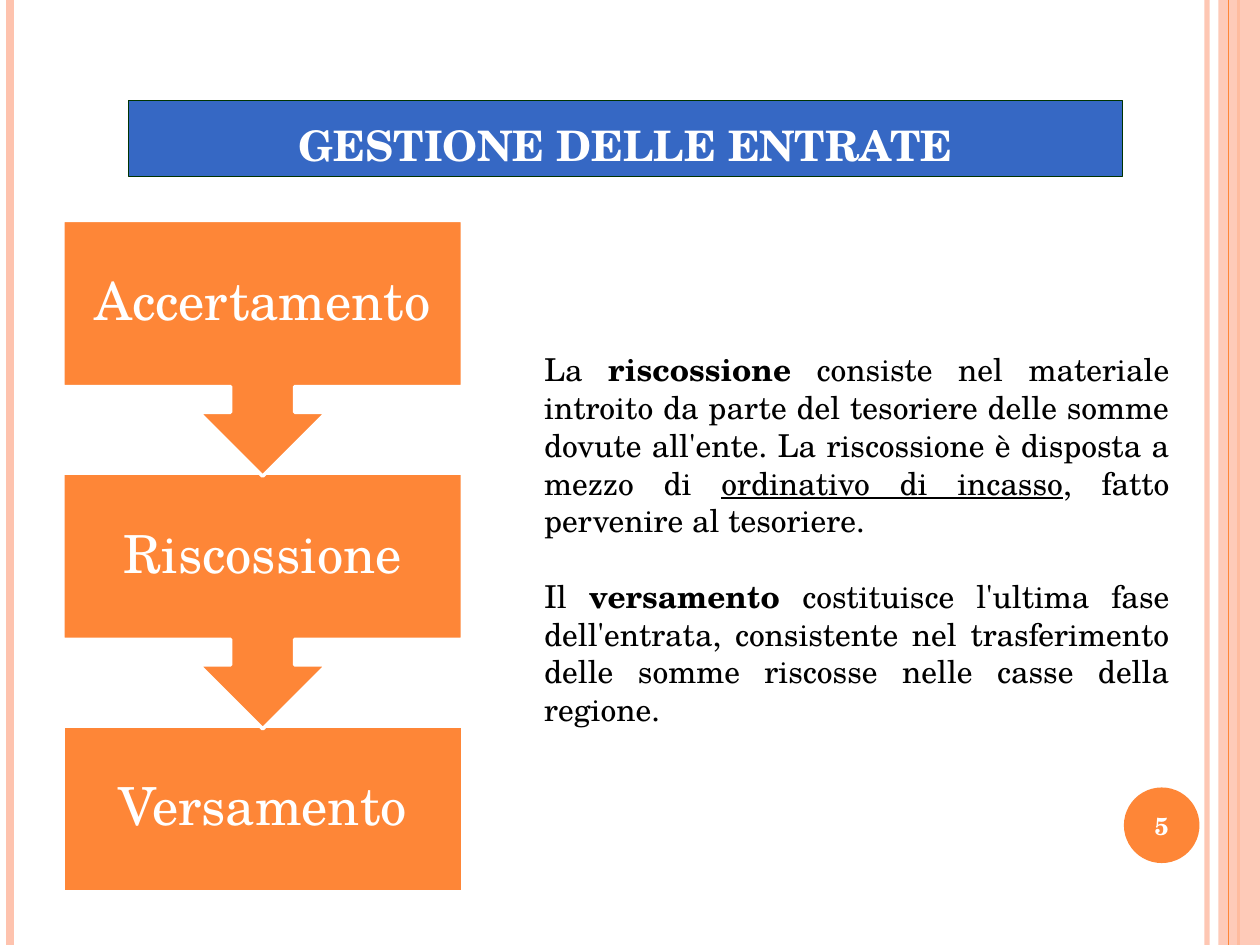
from dataclasses import dataclass

from lxml import etree
from pptx import Presentation
from pptx.dml.color import RGBColor
from pptx.enum.shapes import MSO_CONNECTOR, MSO_SHAPE
from pptx.enum.text import MSO_ANCHOR, PP_ALIGN
from pptx.oxml.ns import qn
from pptx.util import Inches, Pt


@dataclass(frozen=True)
class Theme:
    font: str = "TeX Gyre Schola"
    orange: str = "FE8637"
    peach: str = "FEC3AE"
    blue: str = "3668C4"
    green: str = "003300"
    white: str = "FFFFFF"
    black: str = "000000"
    title: int = 24
    step: int = 30
    body: int = 18
    number: int = 14


THEME = Theme()


def rgb(value):
    return RGBColor.from_string(value)


def set_alpha(fill_parent, percent):
    color = fill_parent.find(f".//{qn('a:srgbClr')}")
    etree.SubElement(color, qn("a:alpha")).set("val", str(percent * 1000))


def style_text(p, size, color, align=PP_ALIGN.CENTER, bold=False):
    p.alignment = align
    p.font.name, p.font.size, p.font.bold = THEME.font, Pt(size), bold
    p.font.color.rgb = rgb(color)


def set_margins(tf, margin):
    tf.margin_left = tf.margin_right = tf.margin_top = tf.margin_bottom = Inches(margin)


def add_filled(slide, kind, box, fill, line=None, width=0):
    sp = slide.shapes.add_shape(kind, *map(Inches, box))
    sp.shadow.inherit = False
    sp.fill.solid()
    sp.fill.fore_color.rgb = rgb(fill)
    if line:
        sp.line.color.rgb = rgb(line)
        sp.line.width = Pt(width)
    else:
        sp.line.fill.background()
    return sp


def add_rule(slide, x, height, color, width, alpha=None):
    rule = slide.shapes.add_connector(
        MSO_CONNECTOR.STRAIGHT, Inches(x), 0, Inches(x), Inches(height))
    rule.line.color.rgb = rgb(color)
    rule.line.width = Pt(width)
    sp_pr = rule._element.spPr
    if alpha:
        set_alpha(sp_pr, alpha)
    etree.SubElement(sp_pr, qn("a:effectLst"))


def add_side_bands(slide, box):
    """Vertical rules and the band along both slide edges."""
    left, top, width, height = box
    right = left + width
    add_rule(slide, right - 0.42, height, THEME.peach, 3, alpha=93)
    add_rule(slide, left + 0.08, height, THEME.peach, 4.5)
    add_rule(slide, right - 0.17, height, THEME.orange, 1.5)
    band = add_filled(slide, MSO_SHAPE.RECTANGLE,
                      (right - 0.33, top, 0.33, height), THEME.peach)
    set_alpha(band._element.spPr, 87)
    add_rule(slide, right - 0.25, height, THEME.orange, 0.75)


def add_title(slide, box, text):
    sp = slide.shapes.title
    sp.left, sp.top, sp.width, sp.height = map(Inches, box)
    sp.fill.solid()
    sp.fill.fore_color.rgb = rgb(THEME.blue)
    sp.line.color.rgb = rgb(THEME.green)
    sp.line.width = Pt(0.75)
    tf = sp.text_frame
    tf.text = text
    tf.vertical_anchor = MSO_ANCHOR.BOTTOM
    style_text(tf.paragraphs[0], THEME.title, THEME.white, bold=True)


def add_steps(slide, box, steps):
    """Stack of boxes, each pointing to the next; the last has no arrow."""
    left, top, width, height = box
    box_height, arrow_height = 1.32, 2.03
    pitch = (height - box_height) / (len(steps) - 1)
    # Bottom step first, so that each arrow tip lies over the box below it
    for i, text in reversed(list(enumerate(steps))):
        last = i == len(steps) - 1
        kind = MSO_SHAPE.RECTANGLE if last else MSO_SHAPE.DOWN_ARROW_CALLOUT
        sp = add_filled(slide, kind,
                        (left, top + i * pitch, width,
                         box_height if last else arrow_height),
                        THEME.orange, THEME.white, 2)
        tf = sp.text_frame
        set_margins(tf, 0.23)
        tf.vertical_anchor = MSO_ANCHOR.MIDDLE
        p = tf.paragraphs[0]
        p.text = text
        p.line_spacing = 0.9
        style_text(p, THEME.step, THEME.white)


def add_explanation(slide, box, paragraphs):
    """Justified paragraphs; each run is a text and its style."""
    tf = slide.shapes.add_textbox(*map(Inches, box)).text_frame
    tf.word_wrap = True
    for i, runs in enumerate(paragraphs):
        p = tf.add_paragraph() if i else tf.paragraphs[0]
        if i:
            p.space_before = Pt(21.5)
        style_text(p, THEME.body, THEME.black, PP_ALIGN.JUSTIFY)
        for text, style in runs:
            r = p.add_run()
            r.text = text
            if style == "bold":
                r.font.bold = True
            elif style == "underline":
                r.font.underline = True


def add_page_number(slide, box, number):
    sp = add_filled(slide, MSO_SHAPE.OVAL, box, THEME.orange)
    tf = sp.text_frame
    set_margins(tf, 0)
    tf.vertical_anchor = MSO_ANCHOR.MIDDLE
    tf.text = number
    style_text(tf.paragraphs[0], THEME.number, THEME.white, bold=True)


def main():
    prs = Presentation()
    prs.slide_width, prs.slide_height = Inches(10), Inches(7.5)
    slide = prs.slides.add_slide(prs.slide_layouts[5])  # Title Only

    add_side_bands(slide, (0, 0, 10, 7.5))
    add_title(slide, (1.02, 0.8, 7.89, 0.6), "GESTIONE DELLE ENTRATE")
    add_steps(slide, (0.5, 1.75, 3.17, 5.33),
              ["Accertamento", "Riscossione", "Versamento"])
    add_explanation(slide, (4.22, 2.73, 5.16, 3.13), [
        [("La ", None), ("riscossione", "bold"),
         (" consiste nel materiale introito da parte del tesoriere delle somme "
          "dovute all'ente. La riscossione è disposta a mezzo di ", None),
         ("ordinativo di incasso", "underline"),
         (", fatto pervenire al tesoriere.", None)],
        [("Il ", None), ("versamento ", "bold"),
         ("costituisce l'ultima fase dell'entrata, consistente nel trasferimento "
          "delle somme riscosse nelle casse della regione.", None)],
    ])
    add_page_number(slide, (8.92, 6.25, 0.6, 0.6), "5")
    prs.save("out.pptx")


if __name__ == "__main__":
    main()
